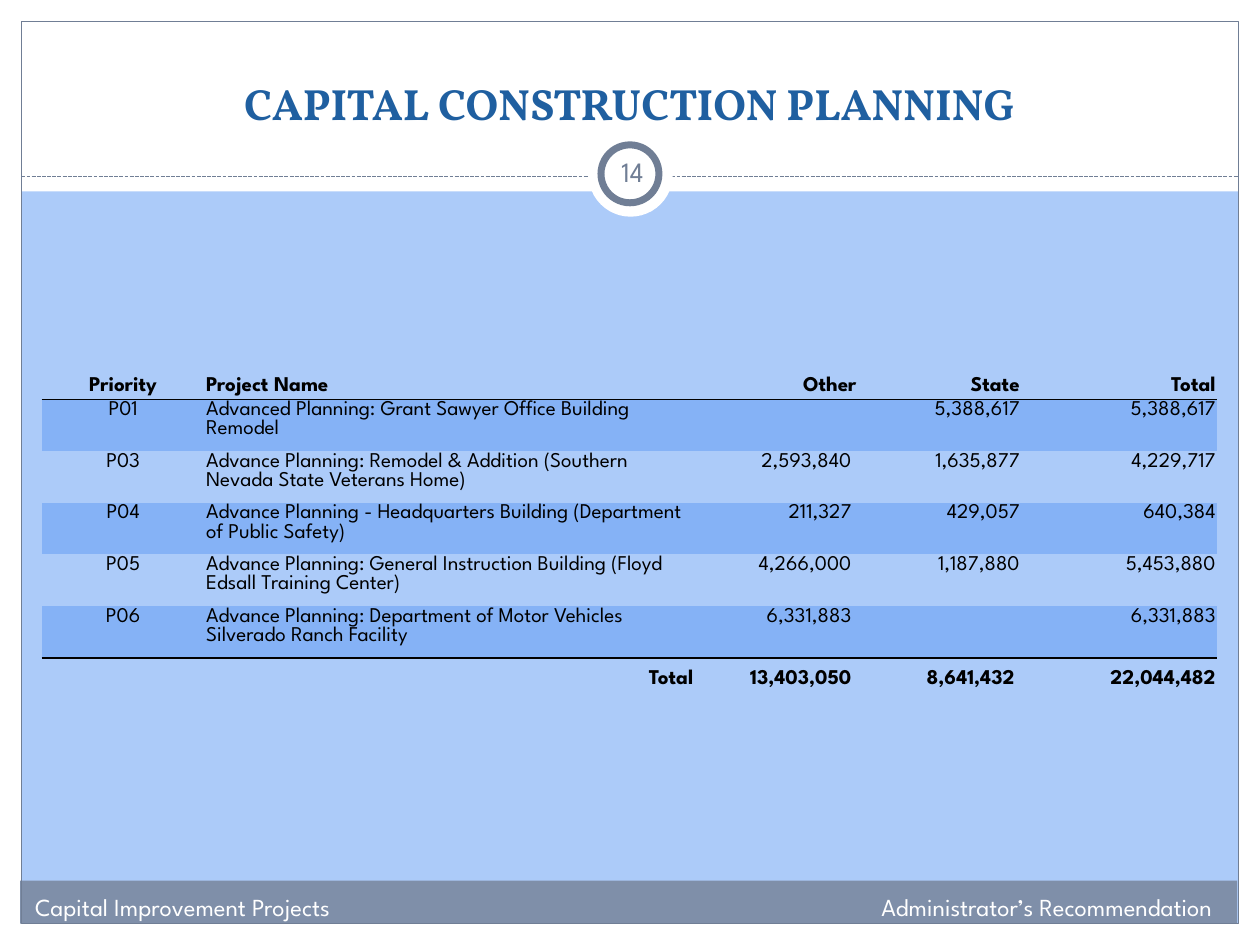
from lxml.etree import SubElement
from pptx import Presentation
from pptx.dml.color import RGBColor
from pptx.enum.dml import MSO_LINE
from pptx.enum.shapes import MSO_CONNECTOR, MSO_SHAPE as Shape
from pptx.enum.text import MSO_ANCHOR as Anchor, PP_ALIGN as Align
from pptx.oxml import parse_xml
from pptx.oxml.ns import nsdecls, qn
from pptx.util import Emu, Inches, Pt

WHITE = RGBColor(0xFF, 0xFF, 0xFF)
BLACK = RGBColor(0x00, 0x00, 0x00)
SKY = RGBColor(0xAC, 0xCB, 0xF9)
BAND = RGBColor(0x85, 0xB2, 0xF6)
SLATE = RGBColor(0x70, 0x7E, 0x95)
FOOTER = RGBColor(0x7F, 0x8F, 0xA9)
NAVY = RGBColor(0x1F, 0x5F, 0xA0)

GRID_COLUMNS, GRID_ROWS = 100, 75
PLAIN_TABLE_STYLE = "{2D5ABB26-0587-4C30-8999-92F81FD0307C}"
COLUMN_WEIGHTS = (2, 1, 1, 1, 1, 2, 2, 2, 2.4)
ROW_HEIGHTS = (2.1, 4.1, 4.1, 4.1, 4.1, 4.1, 3.4)
CELL_ALIGNMENTS = (Align.CENTER, Align.LEFT, Align.RIGHT, Align.RIGHT, Align.RIGHT)
VALUE_COLUMNS = (0, 1, 6, 7, 8)
HEADINGS = ("Priority", "Project Name", "Other", "State", "Total")
PROJECTS = (
    ("P01", "Advanced Planning: Grant Sawyer Office Building Remodel", "", "5,388,617", "5,388,617"),
    ("P03", "Advance Planning: Remodel & Addition (Southern Nevada State Veterans Home)",
     "2,593,840", "1,635,877", "4,229,717"),
    ("P04", "Advance Planning - Headquarters Building (Department of Public Safety)",
     "211,327", "429,057", "640,384"),
    ("P05", "Advance Planning: General Instruction Building (Floyd Edsall Training Center)",
     "4,266,000", "1,187,880", "5,453,880"),
    ("P06", "Advance Planning: Department of Motor Vehicles Silverado Ranch Facility",
     "6,331,883", "", "6,331,883"),
)
TOTALS = ("Total", "13,403,050", "8,641,432", "22,044,482")


class SlideBuilder:
    """Draws styled elements on one slide, measured in grid columns and rows."""

    body_font = "League Spartan"
    title_font = "Vollkorn"

    def __init__(self, presentation):
        self.slide = presentation.slides.add_slide(presentation.slide_layouts[5])
        self.column = presentation.slide_width / GRID_COLUMNS
        self.row = presentation.slide_height / GRID_ROWS
        self.slide.background.fill.solid()
        self.slide.background.fill.fore_color.rgb = SKY

    def box(self, left, top, width, height):
        return (Emu(round(left * self.column)), Emu(round(top * self.row)),
                Emu(round(width * self.column)), Emu(round(height * self.row)))

    def shape(self, kind, bounds, fill=None, line=None, weight=0.75):
        shape = self.slide.shapes.add_shape(kind, *self.box(*bounds))
        shape.shadow.inherit = False
        if fill is None:
            shape.fill.background()
        else:
            shape.fill.solid()
            shape.fill.fore_color.rgb = fill
        if line is None:
            shape.line.fill.background()
        else:
            shape.line.color.rgb = line
            shape.line.width = Pt(weight)

    def dashed_rule(self, left, right, level):
        start_x, y, end_x, _ = self.box(left, level, right, 0)
        rule = self.slide.shapes.add_connector(MSO_CONNECTOR.STRAIGHT, start_x, y, end_x, y)
        rule.line.color.rgb = SLATE
        rule.line.width = Pt(0.75)
        rule.line.dash_style = MSO_LINE.SQUARE_DOT
        SubElement(rule._element.spPr, qn("a:effectLst"))

    def add_text(self, frame, text, size, color, align, bold=False, font=body_font):
        paragraph = frame.paragraphs[0]
        paragraph.alignment = align
        run = paragraph.add_run()
        run.text = text
        run.font.name = font
        run.font.size = Pt(size)
        run.font.bold = bold
        run.font.color.rgb = color

    def title(self, bounds, text):
        title = self.slide.shapes.title
        title.left, title.top, title.width, title.height = self.box(*bounds)
        title.text_frame.vertical_anchor = Anchor.BOTTOM
        self.add_text(title.text_frame, text, 25, NAVY, Align.CENTER, True, self.title_font)
        self.slide.shapes._spTree.append(title._element)

    def text(self, bounds, text, size, color, align, anchor=Anchor.TOP):
        frame = self.slide.shapes.add_textbox(*self.box(*bounds)).text_frame
        frame.word_wrap = True
        frame.vertical_anchor = anchor
        self.add_text(frame, text, size, color, align)

    def table(self, bounds):
        frame = self.slide.shapes.add_table(
            len(ROW_HEIGHTS), len(COLUMN_WEIGHTS), *self.box(*bounds))
        table = frame.table
        table._tbl.tblPr[0].text = PLAIN_TABLE_STYLE
        table.first_row = table.horz_banding = False
        for column, weight in zip(table.columns, COLUMN_WEIGHTS):
            column.width = Emu(round(bounds[2] * self.column * weight / sum(COLUMN_WEIGHTS)))
        last = len(ROW_HEIGHTS) - 1
        for index, height in enumerate(ROW_HEIGHTS):
            table.rows[index].height = Emu(round(height * self.row))
            for cell in table.rows[index].cells:
                self.style_cell(cell, BAND if index % 2 and index < last else None,
                                index in (0, last - 1), index in (0, last))
            if index < last:
                table.cell(index, 1).merge(table.cell(index, 5))
        for index, values in enumerate((HEADINGS,) + PROJECTS):
            for column, value, align in zip(VALUE_COLUMNS, values, CELL_ALIGNMENTS):
                self.fill_cell(table.cell(index, column), value, align, index == 0)
        for column, value in enumerate(TOTALS, start=5):
            self.fill_cell(table.cell(last, column), value, Align.RIGHT, True)
        for index in range(1, last + 1):
            table.cell(index, 6).margin_right = Inches(0.05)
        table.cell(last, 7).margin_right = Inches(0.05)

    def style_cell(self, cell, fill, ruled, centred):
        cell.margin_left = cell.margin_right = cell.margin_top = Inches(0.01)
        cell.margin_bottom = 0
        cell.vertical_anchor = Anchor.MIDDLE if centred else Anchor.TOP
        cell.text_frame.paragraphs[0].font.size = Pt(12)
        if fill is None:
            cell.fill.background()
        else:
            cell.fill.solid()
            cell.fill.fore_color.rgb = fill
        if ruled:
            cell._tc.tcPr.insert(0, parse_xml(
                f'<a:lnB {nsdecls("a")} w="{Pt(1)}"><a:solidFill>'
                f'<a:srgbClr val="{BLACK}"/></a:solidFill></a:lnB>'))

    def fill_cell(self, cell, text, align, bold):
        if text:
            self.add_text(cell.text_frame, text, 12, BLACK, align, bold)


def main():
    presentation = Presentation()
    presentation.slide_width, presentation.slide_height = Inches(10), Inches(7.5)
    builder = SlideBuilder(presentation)
    for margin in ((0, 73.3, 100, 1.7), (0, 0, 100, 15.2), (0, 0, 1.7, 75), (98.3, 0, 1.7, 75)):
        builder.shape(Shape.RECTANGLE, margin, WHITE)
    builder.shape(Shape.RECTANGLE, (1.6, 69.9, 96.6, 3.4), FOOTER)
    builder.shape(Shape.RECTANGLE, (1.7, 1.7, 96.6, 71.6), line=SLATE)
    builder.dashed_rule(1.7, 98.3, 14)
    builder.shape(Shape.OVAL, (46.7, 10.5, 6.7, 6.7), WHITE)
    builder.shape(Shape.OVAL, (47.7, 11.5, 4.6, 4.6), WHITE, SLATE, 4)
    builder.title((3.3, 2.5, 93.3, 8.3), "CAPITAL CONSTRUCTION PLANNING")
    builder.text((47.2, 11.2, 6, 4.8), "14", 16, SLATE, Align.CENTER, Anchor.MIDDLE)
    builder.text((1.8, 70.3, 45, 3.4), "Capital Improvement Projects", 14, WHITE, Align.LEFT)
    builder.text((52.2, 70.3, 45, 3.4), "Administrator’s Recommendation", 14, WHITE, Align.RIGHT)
    builder.table((3.3, 29.6, 93.3, 26))
    presentation.save("out.pptx")


if __name__ == "__main__":
    main()
